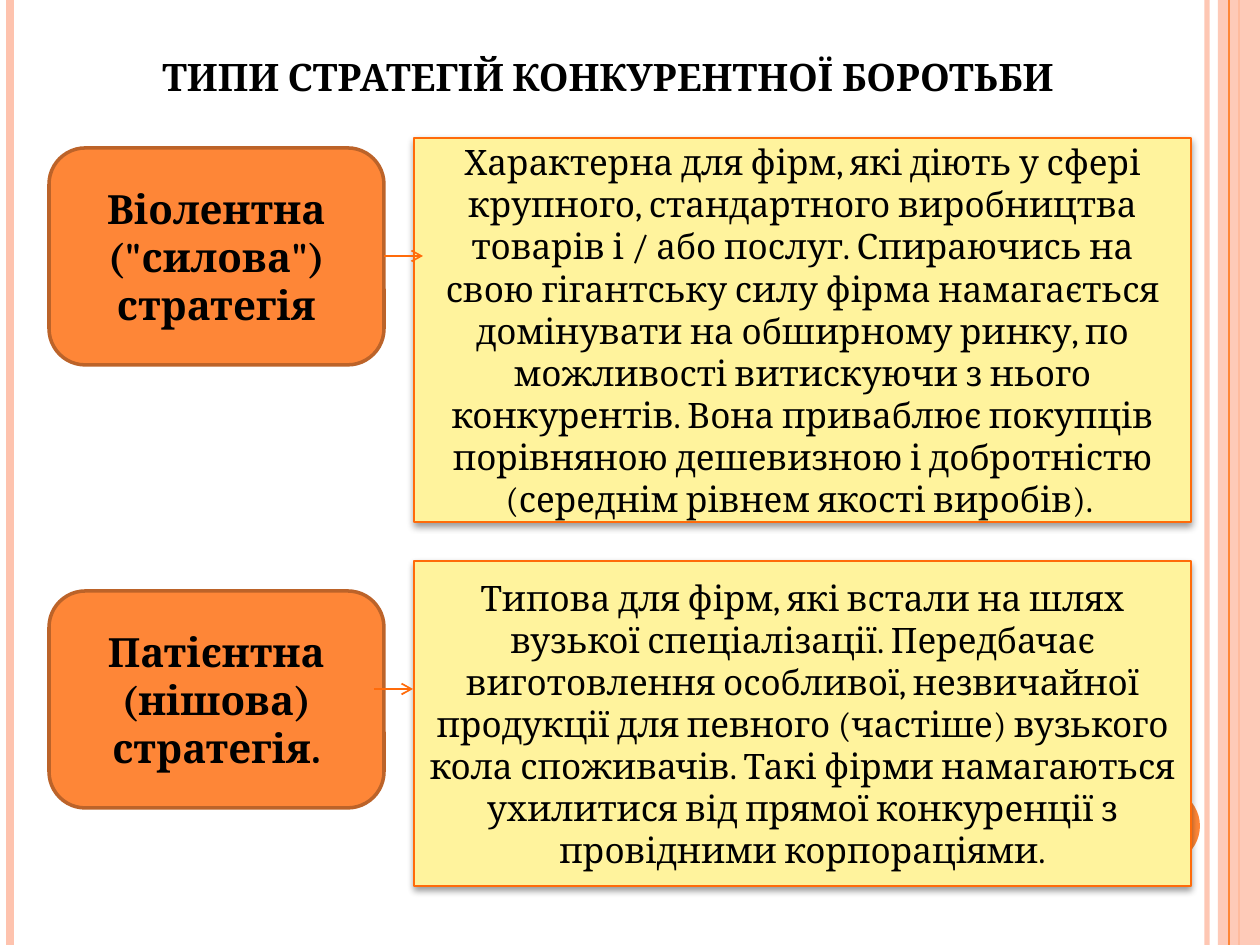
from lxml.etree import SubElement
from pptx import Presentation
from pptx.dml.color import RGBColor
from pptx.enum.shapes import MSO_CONNECTOR, MSO_SHAPE
from pptx.enum.text import MSO_ANCHOR, MSO_AUTO_SIZE, PP_ALIGN
from pptx.oxml.ns import qn
from pptx.util import Pt

PX = 914400 // 126
WIDTH, HEIGHT = 1260, 945

BLACK = RGBColor(0x00, 0x00, 0x00)
ORANGE = RGBColor(0xFE, 0x86, 0x37)
BRIGHT_ORANGE = RGBColor(0xFF, 0x6B, 0x0A)
BROWN = RGBColor(0xBC, 0x63, 0x29)
PEACH = RGBColor(0xFE, 0xC3, 0xAE)
YELLOW = RGBColor(0xFF, 0xF3, 0x9D)


def write(shape, text, size=20, bold=False, small_caps=False, anchor=MSO_ANCHOR.MIDDLE):
    frame = shape.text_frame
    frame.word_wrap = True
    frame.auto_size = MSO_AUTO_SIZE.NONE
    frame.vertical_anchor = anchor
    para = frame.paragraphs[0]
    para.alignment = PP_ALIGN.CENTER
    span = para.add_run()
    span.text = text
    span.font.name = "Cambria"
    span.font.size = Pt(size)
    span.font.bold = bold
    span.font.color.rgb = BLACK
    if small_caps:
        span.font._element.set("cap", "small")


def draw_line(left, top, right, bottom, color, weight, arrow=False):
    line = page.shapes.add_connector(
        MSO_CONNECTOR.STRAIGHT, left * PX, top * PX, right * PX, bottom * PX
    )
    line.line.color.rgb = color
    line.line.width = Pt(weight)
    if arrow:
        SubElement(line.line._get_or_add_ln(), qn("a:tailEnd"), type="arrow")
    SubElement(line._element.spPr, qn("a:effectLst"))
    return line


deck = Presentation()
deck.slide_width = WIDTH * PX
deck.slide_height = HEIGHT * PX
page = deck.slides.add_slide(deck.slide_layouts[5])

for x, color, weight, alpha in [
    (1207, PEACH, 3, 93),
    (10, PEACH, 4.5, 100),
    (1239, ORANGE, 1.5, 100),
]:
    stripe = draw_line(x, 0, x, HEIGHT, color, weight)
    if alpha < 100:
        tint = stripe._element.spPr.find(".//" + qn("a:srgbClr"))
        SubElement(tint, qn("a:alpha"), val=str(alpha * 1000))

band = page.shapes.add_shape(MSO_SHAPE.RECTANGLE, 1218 * PX, 0, 42 * PX, HEIGHT * PX)
band.shadow.inherit = False
band.fill.solid()
band.fill.fore_color.rgb = PEACH
band.line.fill.background()
tint = band._element.spPr.find(".//" + qn("a:srgbClr"))
SubElement(tint, qn("a:alpha"), val="87000")

draw_line(1229, 0, 1229, HEIGHT, ORANGE, 0.75)

disc = page.shapes.add_shape(MSO_SHAPE.OVAL, 1124 * PX, 788 * PX, 76 * PX, 76 * PX)
disc.shadow.inherit = False
disc.fill.solid()
disc.fill.fore_color.rgb = ORANGE
disc.line.fill.background()

title = page.shapes.title
title.left, title.top, title.width, title.height = 78 * PX, 0, 1060 * PX, 107 * PX
write(title, "типи стратегій конкурентної боротьби", size=27, bold=True,
      small_caps=True, anchor=MSO_ANCHOR.BOTTOM)

strategies = [
    (
        'Віолентна ("силова") стратегія', 148,
        "Характерна для фірм, які діють у сфері крупного, стандартного виробництва "
        "товарів і / або послуг. Спираючись на свою гігантську силу фірма намагається "
        "домінувати на обширному ринку, по можливості витискуючи з нього конкурентів. "
        "Вона приваблює покупців порівняною дешевизною і добротністю (середнім рівнем "
        "якості виробів). ", 138, 384,
        384, 256,
    ),
    (
        "Патієнтна (нішова) стратегія.", 591,
        "Типова для фірм, які встали на шлях вузької спеціалізації. Передбачає "
        "виготовлення особливої, незвичайної продукції для певного (частіше) вузького "
        "кола споживачів. Такі фірми намагаються ухилитися від прямої конкуренції з "
        "провідними корпораціями.", 561, 325,
        374, 689,
    ),
]

for name, name_top, detail, detail_top, detail_height, arrow_left, arrow_top in strategies:
    name_box = page.shapes.add_shape(
        MSO_SHAPE.ROUNDED_RECTANGLE, 49 * PX, name_top * PX, 335 * PX, 217 * PX
    )
    name_box.shadow.inherit = False
    name_box.fill.solid()
    name_box.fill.fore_color.rgb = ORANGE
    name_box.line.color.rgb = BROWN
    name_box.line.width = Pt(2)
    write(name_box, name, size=23, bold=True)

    detail_box = page.shapes.add_shape(
        MSO_SHAPE.RECTANGLE, 414 * PX, detail_top * PX, 777 * PX, detail_height * PX
    )
    detail_box.shadow.inherit = False
    detail_box.fill.solid()
    detail_box.fill.fore_color.rgb = YELLOW
    detail_box.line.color.rgb = BRIGHT_ORANGE
    detail_box.line.width = Pt(1)
    effects = detail_box._element.spPr.find(qn("a:effectLst"))
    shadow = SubElement(effects, qn("a:outerShdw"), blurRad=str(Pt(4)),
                        dist=str(Pt(2)), dir="5400000", rotWithShape="0")
    shade = SubElement(shadow, qn("a:srgbClr"), val=str(BLACK))
    SubElement(shade, qn("a:alpha"), val="40000")
    write(detail_box, detail)

    draw_line(arrow_left, arrow_top, arrow_left + 39, arrow_top, BRIGHT_ORANGE, 1, arrow=True)

deck.save("out.pptx")
